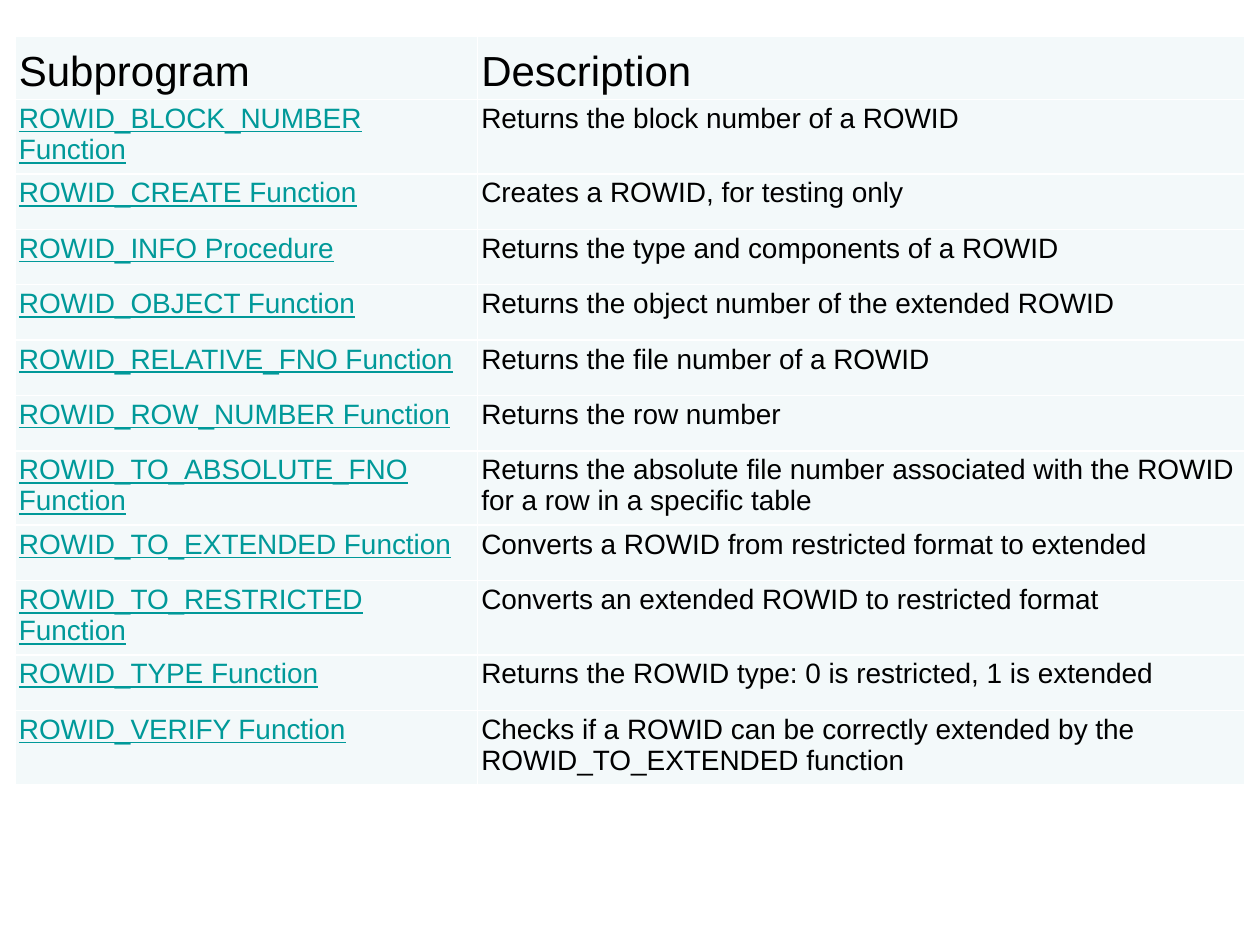
from lxml.etree import SubElement as Sub
from pptx import Presentation
from pptx.dml.color import RGBColor as RGB
from pptx.enum.text import MSO_ANCHOR as Anchor
from pptx.oxml.ns import qn
from pptx.util import Inches, Pt

HEAD = ("Subprogram", "Description")
ROWS = [
    ("ROWID_BLOCK_NUMBER Function", "Returns the block number of a ROWID"),
    ("ROWID_CREATE Function", "Creates a ROWID, for testing only"),
    ("ROWID_INFO Procedure", "Returns the type and components of a ROWID"),
    ("ROWID_OBJECT Function", "Returns the object number of the extended ROWID"),
    ("ROWID_RELATIVE_FNO Function", "Returns the file number of a ROWID"),
    ("ROWID_ROW_NUMBER Function", "Returns the row number"),
    ("ROWID_TO_ABSOLUTE_FNO Function",
     "Returns the absolute file number associated with the ROWID "
     "for a row in a specific table"),
    ("ROWID_TO_EXTENDED Function",
     "Converts a ROWID from restricted format to extended"),
    ("ROWID_TO_RESTRICTED Function",
     "Converts an extended ROWID to restricted format"),
    ("ROWID_TYPE Function",
     "Returns the ROWID type: 0 is restricted, 1 is extended"),
    ("ROWID_VERIFY Function",
     "Checks if a ROWID can be correctly extended by the "
     "ROWID_TO_EXTENDED function"),
]
COLS = (3.67, 6.09)
TOP, LOW, TALL = 0.5, 0.44, 0.59
WRAPS = (1, 7, 9, 11)  # rows with two lines of text
INK, LINK, PALE, WHITE = "000000", "009999", "F3F9FA", "FFFFFF"


def paint(color, tint):
    color.rgb = RGB.from_string(tint)


def edge(cell):
    """Draw thin white borders; they must come before the cell's fill."""
    props = cell._tc.get_or_add_tcPr()
    for side in ("lnL", "lnR", "lnT", "lnB"):
        line = Sub(props, qn(f"a:{side}"), w=str(Pt(1)))
        Sub(Sub(line, qn("a:solidFill")), qn("a:srgbClr"), val=WHITE)


def write(cell, text, size, tint, under):
    run = cell.text_frame.paragraphs[0].add_run()
    run.text = text
    font = run.font
    font.name, font.size = "Arial", Pt(size)
    font.bold, font.underline = False, under
    paint(font.color, tint)


def style(cell, anchor):
    cell.margin_left = cell.margin_right = Inches(0.03)
    cell.margin_top = cell.margin_bottom = Inches(0.03)
    cell.vertical_anchor = anchor
    edge(cell)
    cell.fill.solid()
    paint(cell.fill.fore_color, PALE)


def build(slide):
    data = [HEAD] + ROWS
    highs = [TOP] + [TALL if i in WRAPS else LOW for i in range(1, len(data))]
    table = slide.shapes.add_table(
        len(data), len(COLS), Inches(0.12), Inches(0.29),
        Inches(sum(COLS)), Inches(sum(highs))).table
    table.first_row = table.horz_banding = False
    for col, wide in zip(table.columns, COLS):
        col.width = Inches(wide)
    for i, (row, high, texts) in enumerate(zip(table.rows, highs, data)):
        row.height = Inches(high)
        for j, (cell, text) in enumerate(zip(row.cells, texts)):
            link = i > 0 and j == 0
            style(cell, Anchor.TOP if i else Anchor.BOTTOM)
            write(cell, text, 16 if i else 24, LINK if link else INK, link)


def main():
    deck = Presentation()
    deck.slide_width, deck.slide_height = Inches(10), Inches(7.5)
    build(deck.slides.add_slide(deck.slide_layouts[6]))
    deck.save("out.pptx")


if __name__ == "__main__":
    main()
